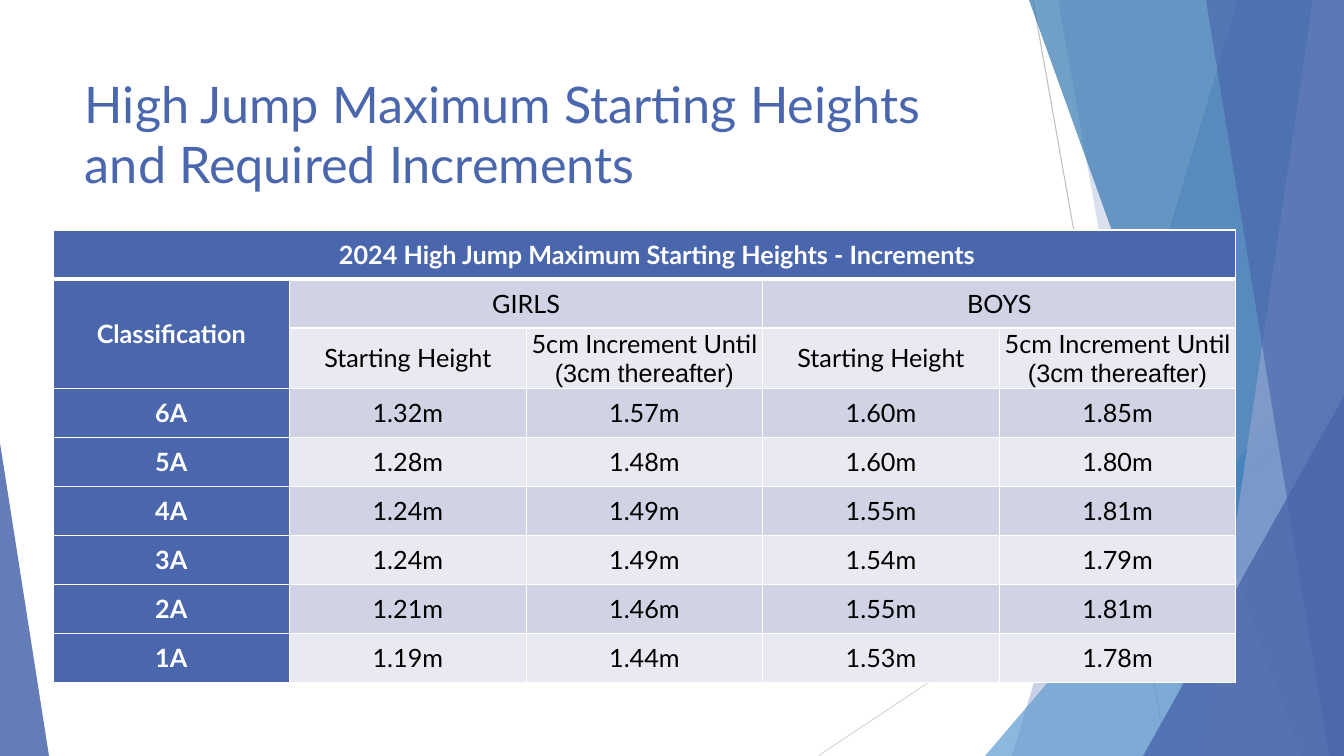
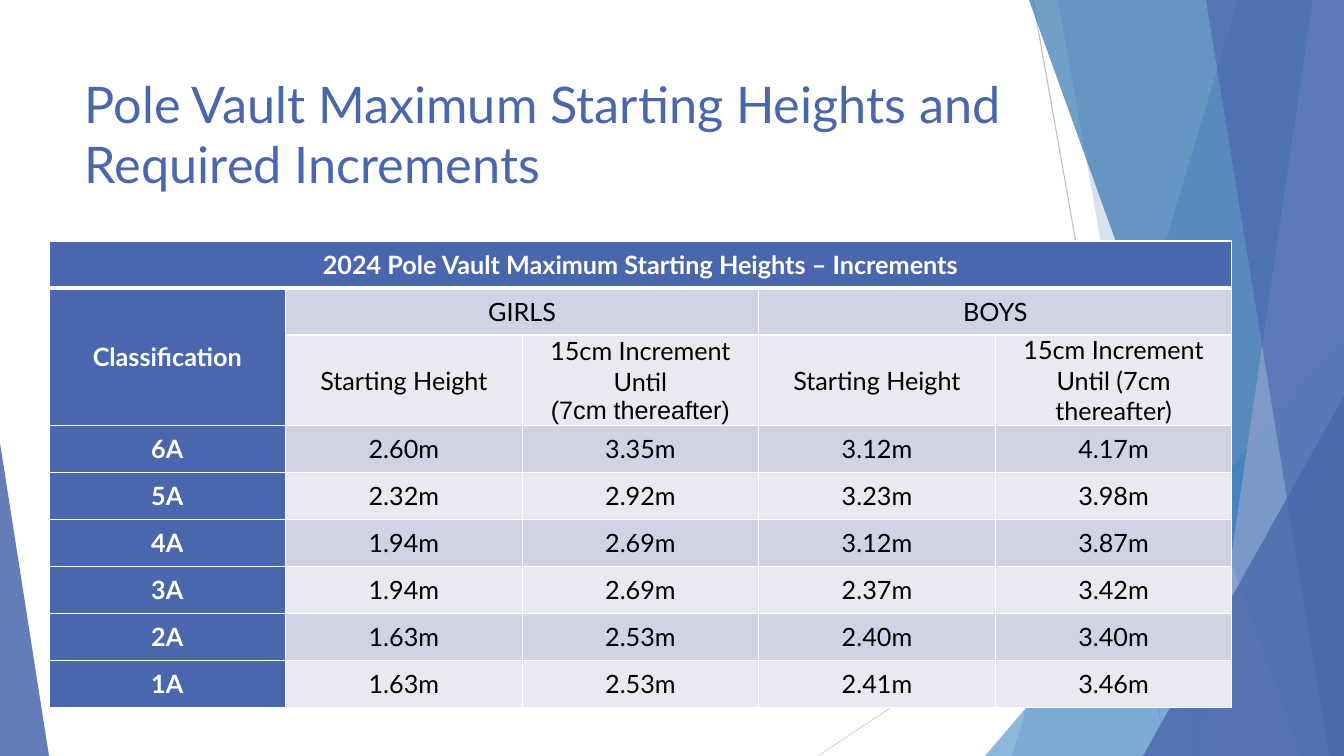
from dataclasses import dataclass
from typing import Union

from lxml.etree import SubElement
from pptx import Presentation
from pptx.dml.color import RGBColor
from pptx.enum.shapes import MSO_CONNECTOR, MSO_SHAPE
from pptx.enum.text import MSO_ANCHOR, PP_ALIGN
from pptx.oxml.ns import qn
from pptx.shapes.autoshape import Shape
from pptx.slide import Slide
from pptx.table import _Cell as Cell
from pptx.util import Emu, Pt

PAGE_WIDTH, PAGE_HEIGHT = 1344, 756
EMU_PER_PX = 12192000 / PAGE_WIDTH


def px(length: int) -> Emu:
    return Emu(round(length * EMU_PER_PX))


@dataclass(frozen=True)
class Theme:
    primary: str = "4A66AC"
    sky: str = "629DD1"
    ocean: str = "3477B2"
    lavender: str = "90A2CF"
    band_dark: str = "D0D3E3"
    band_light: str = "E9EAF1"
    white: str = "FFFFFF"
    black: str = "000000"
    line_dark: str = "BFBFBF"
    line_light: str = "D9D9D9"
    font: str = "Lato"
    note_font: str = "Arial"
    title_size: int = 36
    table_size: int = 18
    hairline: float = 0.75
    border: int = 1
    header_border: int = 3


THEME = Theme()


@dataclass(frozen=True)
class Ray:
    start: tuple[int, int]
    end: tuple[int, int]
    color: str


@dataclass(frozen=True)
class Shard:
    """A panel with a slanted left side that reaches the right page edge."""
    top_left: int
    bottom_left: int
    color: str
    opacity: int


@dataclass(frozen=True)
class Corner:
    """A right-angled triangle standing on the bottom page edge."""
    left: int
    top: int
    width: int
    apex: int
    color: str
    opacity: int


@dataclass(frozen=True)
class EventPage:
    title: str
    table_title: str
    increments: tuple[str, str]
    heights: tuple[tuple[str, str, str, str, str], ...]
    left: int
    top: int
    row_height: int
    label_row_height: int
    header_indent: int = 0


RAYS = (
    Ray((1033, 0), (1167, PAGE_HEIGHT), THEME.line_dark),
    Ray((PAGE_WIDTH, 406), (818, PAGE_HEIGHT), THEME.line_light),
)
FACETS: tuple[Union[Shard, Corner], ...] = (
    Shard(1238, 1012, THEME.primary, 30),
    Shard(1058, 1192, THEME.primary, 20),
    Corner(985, 336, 359, 1, THEME.sky, 72),
    Shard(1029, 1301, THEME.ocean, 70),
    Shard(1313, 1202, THEME.lavender, 70),
    Shard(1206, 1329, THEME.primary, 65),
    Corner(1143, 396, 201, 1, THEME.primary, 80),
    Corner(0, 443, 49, 0, THEME.primary, 85),
)
TABLE_WIDTH = 1183
CELL_MARGIN = 7
LABEL_ROW = 2
INCREMENT_COLUMNS = (2, 4)

EVENTS = (
    EventPage(
        title="High Jump Maximum Starting Heights and Required Increments",
        table_title="2024 High Jump Maximum Starting Heights - Increments",
        increments=("5cm Increment Until\n(3cm thereafter)",) * 2,
        heights=(
            ("6A", "1.32m", "1.57m", "1.60m", "1.85m"),
            ("5A", "1.28m", "1.48m", "1.60m", "1.80m"),
            ("4A", "1.24m", "1.49m", "1.55m", "1.81m"),
            ("3A", "1.24m", "1.49m", "1.54m", "1.79m"),
            ("2A", "1.21m", "1.46m", "1.55m", "1.81m"),
            ("1A", "1.19m", "1.44m", "1.53m", "1.78m"),
        ),
        left=53, top=230, row_height=49, label_row_height=58, header_indent=25,
    ),
    EventPage(
        title="Pole Vault Maximum Starting Heights and Required Increments",
        table_title="2024 Pole Vault Maximum Starting Heights – Increments",
        increments=("15cm Increment Until\n(7cm thereafter)",
                    "15cm Increment Until (7cm thereafter)"),
        heights=(
            ("6A", "2.60m", "3.35m", "3.12m", "4.17m"),
            ("5A", "2.32m", "2.92m", "3.23m", "3.98m"),
            ("4A", "1.94m", "2.69m", "3.12m", "3.87m"),
            ("3A", "1.94m", "2.69m", "2.37m", "3.42m"),
            ("2A", "1.63m", "2.53m", "2.40m", "3.40m"),
            ("1A", "1.63m", "2.53m", "2.41m", "3.46m"),
        ),
        left=49, top=241, row_height=47, label_row_height=90,
    ),
)


def rgb(color: str) -> RGBColor:
    return RGBColor.from_string(color)


def fill_translucent(shape: Shape, color: str, opacity: int) -> None:
    shape.shadow.inherit = False
    shape.line.fill.background()
    shape.fill.solid()
    shape.fill.fore_color.rgb = rgb(color)
    color_node = shape.fill._xPr.find(qn("a:solidFill"))[0]
    SubElement(color_node, qn("a:alpha"), val=str(opacity * 1000))


def draw_ray(page: Slide, ray: Ray) -> None:
    line = page.shapes.add_connector(
        MSO_CONNECTOR.STRAIGHT, *map(px, ray.start + ray.end))
    line.line.color.rgb = rgb(ray.color)
    line.line.width = Pt(THEME.hairline)
    SubElement(line._element.spPr, qn("a:effectLst"))


def draw_facet(page: Slide, facet: Union[Shard, Corner]) -> None:
    if isinstance(facet, Shard):
        outline = page.shapes.build_freeform(facet.top_left, 0, scale=EMU_PER_PX)
        outline.add_line_segments([
            (PAGE_WIDTH, 0), (PAGE_WIDTH, PAGE_HEIGHT),
            (facet.bottom_left, PAGE_HEIGHT)])
        shape = outline.convert_to_shape()
    else:
        shape = page.shapes.add_shape(
            MSO_SHAPE.ISOSCELES_TRIANGLE, px(facet.left), px(facet.top),
            px(facet.width), px(PAGE_HEIGHT - facet.top))
        shape.adjustments[0] = facet.apex
    fill_translucent(shape, facet.color, facet.opacity)


def draw_title(page: Slide, text: str) -> None:
    box = page.shapes.add_textbox(px(75), px(68), px(948), px(145))
    frame = box.text_frame
    frame.word_wrap = True
    frame.text = text
    font = frame.paragraphs[0].font
    font.name, font.size = THEME.font, Pt(THEME.title_size)
    font.color.rgb = rgb(THEME.primary)


def set_borders(cell: Cell, row: int) -> None:
    properties = cell._tc.get_or_add_tcPr()
    thick_side = {0: "B", 1: "T"}.get(row)
    for side in "LRTB":
        width = THEME.header_border if side == thick_side else THEME.border
        line = SubElement(properties, qn(f"a:ln{side}"), w=str(Pt(width)))
        fill = SubElement(line, qn("a:solidFill"))
        SubElement(fill, qn("a:srgbClr"), val=THEME.white)


def style_cell(cell: Cell, row: int, column: int) -> None:
    is_heading = row == 0 or column == 0
    band = THEME.band_dark if row % 2 else THEME.band_light
    is_increment = row >= LABEL_ROW and column in INCREMENT_COLUMNS
    set_borders(cell, row)
    cell.fill.solid()
    cell.fill.fore_color.rgb = rgb(THEME.primary if is_heading else band)
    cell.vertical_anchor = MSO_ANCHOR.MIDDLE
    cell.margin_top = cell.margin_bottom = 0
    cell.margin_left = cell.margin_right = px(0 if is_increment else CELL_MARGIN)
    for index, para in enumerate(cell.text_frame.paragraphs):
        para.alignment = PP_ALIGN.CENTER
        para.font.name = THEME.note_font if index else THEME.font
        para.font.size = Pt(THEME.table_size)
        para.font.bold = is_heading
        para.font.color.rgb = rgb(THEME.white if is_heading else THEME.black)


def draw_table(page: Slide, event: EventPage) -> None:
    girls, boys = event.increments
    rows = (
        (event.table_title, "", "", "", ""),
        ("Classification", "GIRLS", "", "BOYS", ""),
        ("", "Starting Height", girls, "Starting Height", boys),
        *event.heights,
    )
    height = event.row_height * (len(rows) - 1) + event.label_row_height
    table = page.shapes.add_table(
        len(rows), len(rows[0]), px(event.left), px(event.top),
        px(TABLE_WIDTH), px(height)).table
    table.first_row = table.horz_banding = False
    for row, texts in enumerate(rows):
        table.rows[row].height = px(
            event.label_row_height if row == LABEL_ROW else event.row_height)
        for column, text in enumerate(texts):
            cell = table.cell(row, column)
            cell.text = text
            style_cell(cell, row, column)
    for first, last in (((0, 0), (0, 4)), ((1, 0), (2, 0)),
                        ((1, 1), (1, 2)), ((1, 3), (1, 4))):
        table.cell(*first).merge(table.cell(*last))
    if event.header_indent:
        para = table.cell(0, 0).text_frame.paragraphs[0]
        para._p.get_or_add_pPr().set("marL", str(px(event.header_indent)))


def main() -> None:
    deck = Presentation()
    deck.slide_width, deck.slide_height = px(PAGE_WIDTH), px(PAGE_HEIGHT)
    blank = deck.slide_layouts[6]
    for event in EVENTS:
        page = deck.slides.add_slide(blank)
        for ray in RAYS:
            draw_ray(page, ray)
        for facet in FACETS:
            draw_facet(page, facet)
        draw_title(page, event.title)
        draw_table(page, event)
    deck.save("out.pptx")


if __name__ == "__main__":
    main()
